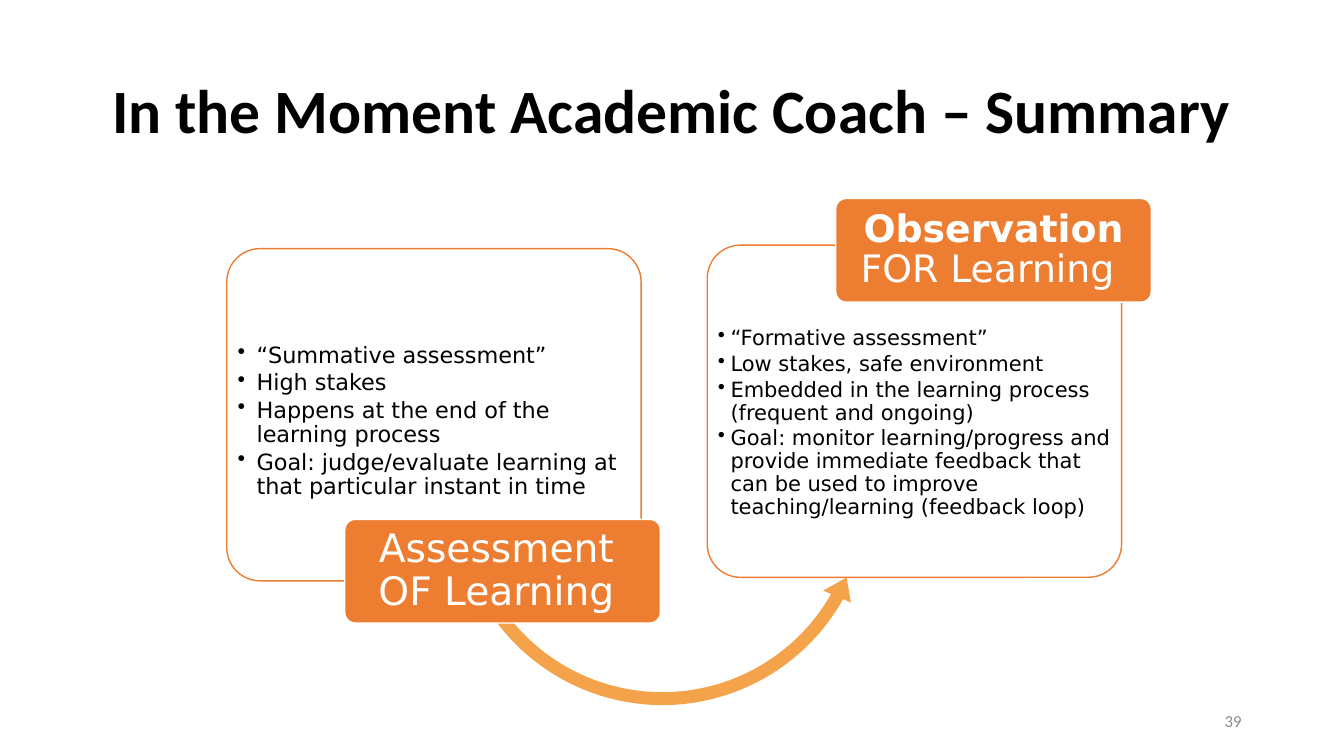
from dataclasses import dataclass

from lxml.etree import SubElement
from pptx import Presentation
from pptx.dml.color import RGBColor
from pptx.enum.shapes import MSO_SHAPE
from pptx.enum.text import MSO_ANCHOR, MSO_AUTO_SIZE, PP_ALIGN
from pptx.oxml.ns import qn
from pptx.shapes.autoshape import Shape
from pptx.slide import Slide
from pptx.text.text import TextFrame, _Run
from pptx.util import Pt


@dataclass(frozen=True)
class Theme:
    ink: RGBColor = RGBColor(0, 0, 0)
    paper: RGBColor = RGBColor(255, 255, 255)
    accent: RGBColor = RGBColor(0xED, 0x7D, 0x31)
    arrow: RGBColor = RGBColor(0xF4, 0xA3, 0x4A)
    muted: RGBColor = RGBColor(0x8C, 0x8C, 0x8C)
    title_font: str = "Calibri"
    body_font: str = "DejaVu Sans"
    title_size: float = 44
    number_size: float = 12
    line_spacing: float = 0.9


@dataclass(frozen=True)
class Area:
    left: float
    top: float
    width: float
    height: float

    def lengths(self) -> tuple[Pt, Pt, Pt, Pt]:
        return Pt(self.left), Pt(self.top), Pt(self.width), Pt(self.height)


@dataclass(frozen=True)
class HeadingPart:
    text: str
    bold: bool = False
    break_after: bool = False


@dataclass(frozen=True)
class Card:
    panel: Area
    body: Area
    label: Area
    anchor: MSO_ANCHOR
    heading: tuple[HeadingPart, ...]
    heading_size: float
    points: tuple[str, ...]
    point_size: float
    indent: float


THEME = Theme()
TITLE_AREA = Area(66, 28.8, 828, 104.4)
NUMBER_AREA = Area(678, 500.4, 216, 28.8)
ARROW_AREA = Area(319, 201.6, 308.2, 308.2)
# Band thickness, head angle, end angle, start angle, head half-width
ARROW_ADJUSTMENTS = (0.03, 3.66, 17.66, 86.49, 0.035)

CARDS = (
    Card(
        panel=Area(162, 177.6, 296, 237.3),
        body=Area(167.6, 183, 285, 175.7),
        label=Area(246.3, 371, 225.4, 74),
        anchor=MSO_ANCHOR.BOTTOM,
        heading=(HeadingPart("Assessment ", break_after=True), HeadingPart("OF Learning ")),
        heading_size=28,
        points=(
            "“Summative assessment”",
            "High stakes",
            "Happens at the end of the learning process",
            "Goal: judge/evaluate learning at that particular instant in time",
        ),
        point_size=16,
        indent=13.5,
    ),
    Card(
        panel=Area(505.2, 175.1, 296, 237.3),
        body=Area(510.6, 231.8, 285, 175.7),
        label=Area(597, 141.8, 225.4, 74),
        anchor=MSO_ANCHOR.TOP,
        heading=(HeadingPart("Observation", bold=True), HeadingPart(" FOR Learning ")),
        heading_size=27,
        points=(
            "“Formative assessment”",
            "Low stakes, safe environment",
            "Embedded in the learning process (frequent and ongoing)",
            "Goal: monitor learning/progress and provide immediate feedback "
            "that can be used to improve teaching/learning (feedback loop)",
        ),
        point_size=15,
        indent=9,
    ),
)


def style_span(span: _Run, font: str, size: float, color: RGBColor, bold: bool = False) -> None:
    span.font.name = font
    span.font.size = Pt(size)
    span.font.color.rgb = color
    span.font.bold = bold


def set_up_frame(frame: TextFrame, anchor: MSO_ANCHOR, side: float, end: float) -> None:
    frame.word_wrap = True
    frame.auto_size = MSO_AUTO_SIZE.NONE
    frame.vertical_anchor = anchor
    frame.margin_left = frame.margin_right = Pt(side)
    frame.margin_top = frame.margin_bottom = Pt(end)


def add_rounded(page: Slide, area: Area, fill: RGBColor, line: RGBColor) -> Shape:
    box = page.shapes.add_shape(MSO_SHAPE.ROUNDED_RECTANGLE, *area.lengths())
    box.adjustments[0] = 0.1
    box.shadow.inherit = False
    box.fill.solid()
    box.fill.fore_color.rgb = fill
    box.line.color.rgb = line
    box.line.width = Pt(1)
    return box


def add_title(page: Slide, text: str) -> None:
    title = page.shapes.title
    title.left, title.top, title.width, title.height = TITLE_AREA.lengths()
    set_up_frame(title.text_frame, MSO_ANCHOR.MIDDLE, 7.2, 3.6)
    title.text_frame.text = text
    para = title.text_frame.paragraphs[0]
    para.alignment = PP_ALIGN.CENTER
    para.line_spacing = THEME.line_spacing
    style_span(para.runs[0], THEME.title_font, THEME.title_size, THEME.ink, bold=True)


def add_page_number(page: Slide, number: str) -> None:
    box = page.shapes.add_textbox(*NUMBER_AREA.lengths())
    set_up_frame(box.text_frame, MSO_ANCHOR.MIDDLE, 7.2, 3.6)
    box.text_frame.text = number
    para = box.text_frame.paragraphs[0]
    para.alignment = PP_ALIGN.RIGHT
    style_span(para.runs[0], THEME.title_font, THEME.number_size, THEME.muted)


def add_arrow(page: Slide) -> None:
    arrow = page.shapes.add_shape(MSO_SHAPE.LEFT_CIRCULAR_ARROW, *ARROW_AREA.lengths())
    for index, value in enumerate(ARROW_ADJUSTMENTS):
        arrow.adjustments[index] = value
    arrow.shadow.inherit = False
    arrow.fill.solid()
    arrow.fill.fore_color.rgb = THEME.arrow
    arrow.line.fill.background()


def add_points(page: Slide, card: Card) -> None:
    box = page.shapes.add_textbox(*card.body.lengths())
    frame = box.text_frame
    set_up_frame(frame, card.anchor, 2.2, 2.2)
    frame.text = "\n".join(card.points)
    for para in frame.paragraphs:
        para.line_spacing = THEME.line_spacing
        para.space_after = Pt(round(0.15 * card.point_size, 2))
        style_span(para.runs[0], THEME.body_font, card.point_size, THEME.ink)
        # Hanging bullet
        properties = para._p.get_or_add_pPr()
        properties.set("marL", str(Pt(card.indent)))
        properties.set("indent", str(-Pt(card.indent)))
        SubElement(properties, qn("a:buChar"), char="•")


def add_label(page: Slide, card: Card) -> None:
    label = add_rounded(page, card.label, THEME.accent, THEME.paper)
    set_up_frame(label.text_frame, MSO_ANCHOR.MIDDLE, 4.2, 2.8)
    para = label.text_frame.paragraphs[0]
    para.alignment = PP_ALIGN.CENTER
    para.line_spacing = THEME.line_spacing
    for part in card.heading:
        span = para.add_run()
        span.text = part.text
        style_span(span, THEME.body_font, card.heading_size, THEME.paper, part.bold)
        if part.break_after:
            para.add_line_break()


def add_card(page: Slide, card: Card) -> None:
    panel = add_rounded(page, card.panel, THEME.paper, THEME.accent)
    # Panel fill is 90% opaque
    color = panel._element.spPr.find(qn("a:solidFill")).find(qn("a:srgbClr"))
    SubElement(color, qn("a:alpha"), val="90000")
    add_points(page, card)
    add_label(page, card)


def main() -> None:
    deck = Presentation()
    deck.slide_width, deck.slide_height = Pt(960), Pt(540)
    page = deck.slides.add_slide(deck.slide_layouts.get_by_name("Title Only"))
    add_title(page, "In the Moment Academic Coach – Summary")
    add_page_number(page, "39")
    # The arrow lies behind both cards
    add_arrow(page)
    for card in CARDS:
        add_card(page, card)
    deck.save("out.pptx")


if __name__ == "__main__":
    main()
